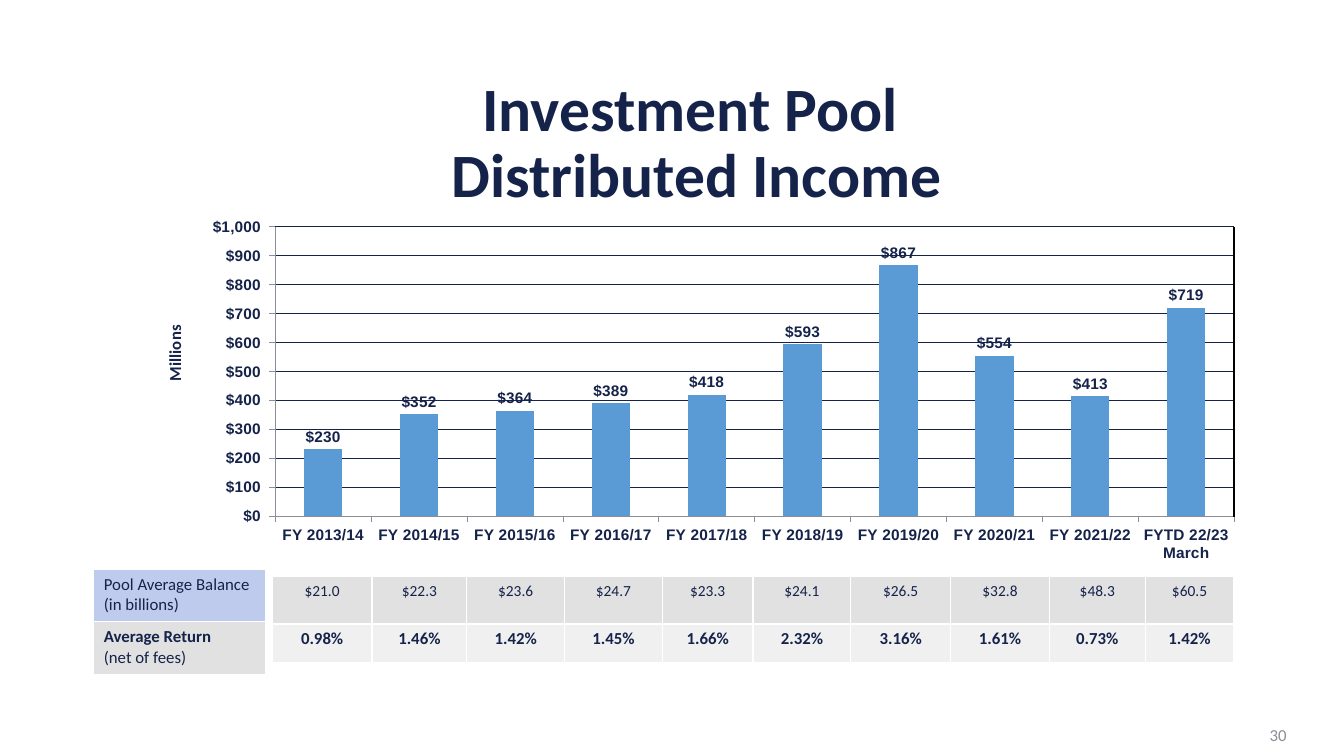
from lxml import etree
from pptx import Presentation
from pptx.chart.data import CategoryChartData
from pptx.dml.color import RGBColor
from pptx.enum import chart as ch, shapes, text
from pptx.oxml import parse_xml
from pptx.oxml.ns import nsdecls, qn
from pptx.util import Inches, Pt

NAVY, GREY, WHITE = "15234A", "8C8D96", "FFFFFF"
BLUE, LILAC, SILVER, PALE = "5B9BD5", "BECBED", "E1E1E1", "F0F0F0"
CENTER, LEFT, RIGHT = text.PP_ALIGN.CENTER, text.PP_ALIGN.LEFT, text.PP_ALIGN.RIGHT

YEARS = [f"FY {year}/{year - 1999}" for year in range(2013, 2022)] + ["FYTD 22/23 March"]
INCOME = [230, 352, 364, 389, 418, 593, 867, 554, 413, 719]
BALANCES = ["$21.0", "$22.3", "$23.6", "$24.7", "$23.3",
            "$24.1", "$26.5", "$32.8", "$48.3", "$60.5"]
RETURNS = ["0.98%", "1.46%", "1.42%", "1.45%", "1.66%",
           "2.32%", "3.16%", "1.61%", "0.73%", "1.42%"]
YEAR_WIDTHS = [0.99, 0.94, 0.97, 0.97, 0.9, 0.97, 0.99, 0.98, 0.95, 0.88]


def rgb(color):
    return RGBColor.from_string(color)


def style_font(font, size, color=NAVY, bold=False, name="Calibri"):
    font.size, font.bold, font.name = Pt(size), bold, name
    font.color.rgb = rgb(color)


def style_line(line, color, width):
    line.color.rgb = rgb(color)
    line.width = Pt(width)


def add_label(slide, box, wording, size, color, align, bold=False):
    label = slide.shapes.add_textbox(*map(Inches, box))
    frame = label.text_frame
    frame.word_wrap = True
    frame.vertical_anchor = text.MSO_ANCHOR.MIDDLE
    frame.text = wording
    paragraph = frame.paragraphs[0]
    paragraph.alignment = align
    for run in paragraph.runs:
        style_font(run.font, size, color, bold)
    return paragraph


def place(parent, index, **fractions):
    """Give a chart part a manual layout, in fractions of the chart."""
    for old in parent.findall(qn("c:layout")):
        parent.remove(old)
    layout = parse_xml(f"<c:layout {nsdecls('c')}><c:manualLayout/></c:layout>")
    settings = {"xMode": "edge", "yMode": "edge", **fractions}
    if "w" in fractions:
        settings = {"layoutTarget": "inner", **settings}
    for tag, value in settings.items():
        etree.SubElement(layout[0], qn(f"c:{tag}")).set("val", str(value))
    parent.insert(index, layout)


def add_income_chart(slide, box):
    data = CategoryChartData()
    data.categories = YEARS
    data.add_series("Series 1", INCOME)
    chart = slide.shapes.add_chart(
        ch.XL_CHART_TYPE.COLUMN_CLUSTERED, *map(Inches, box), data).chart
    chart.has_legend = chart.has_title = False
    style_font(chart.font, 18)

    # Columns and their values
    columns = chart.plots[0]
    columns.gap_width = 150
    columns.vary_by_categories = False
    columns.series[0].format.fill.solid()
    columns.series[0].format.fill.fore_color.rgb = rgb(BLUE)
    columns.has_data_labels = True
    labels = columns.data_labels
    labels.show_value = True
    labels.position = ch.XL_LABEL_POSITION.OUTSIDE_END
    labels.number_format, labels.number_format_is_linked = '"$"#,##0', False
    style_font(labels.font, 11, bold=True, name="Arial")

    # Axes
    millions = chart.value_axis
    for axis in (chart.category_axis, millions):
        axis.major_tick_mark = ch.XL_TICK_MARK.OUTSIDE
        axis.minor_tick_mark = ch.XL_TICK_MARK.NONE
        style_font(axis.tick_labels.font, 11, bold=True, name="Arial")
        style_line(axis.format.line, GREY, 0.5)
    millions.minimum_scale, millions.maximum_scale, millions.major_unit = 0, 1000, 100
    millions.tick_labels.number_format = '"$"#,##0_);[Red]\\("$"#,##0\\)'
    millions.tick_labels.number_format_is_linked = False
    millions.has_major_gridlines = True
    style_line(millions.major_gridlines.format.line, NAVY, 0.5)
    heading = millions.axis_title
    heading.text_frame.text = "Millions"
    style_font(heading.text_frame.paragraphs[0].runs[0].font, 12, bold=True)

    # Layout
    place(heading.text_frame._txBody.getparent().getparent(), 1, x=0.01, y=0.37)
    place(chart._chartSpace.chart.plotArea, 0, x=0.115, y=0.115, w=0.875, h=0.77)


def add_border_line(slide, x, top, bottom):
    border = slide.shapes.add_connector(
        shapes.MSO_CONNECTOR.STRAIGHT, Inches(x), Inches(top), Inches(x), Inches(bottom))
    style_line(border.line, "000000", 1.5)
    etree.SubElement(border._element.spPr, qn("a:effectLst"))


def fill_cell(cell, wording, fill, align, size, bold_lines):
    properties = cell._tc.get_or_add_tcPr()
    for side in "LRTB":
        properties.append(parse_xml(
            f'<a:ln{side} {nsdecls("a")} w="12700"><a:solidFill>'
            f'<a:srgbClr val="{WHITE}"/></a:solidFill></a:ln{side}>'))
    cell.fill.solid()
    cell.fill.fore_color.rgb = rgb(fill)
    cell.text = wording
    for paragraph, bold in zip(cell.text_frame.paragraphs, bold_lines):
        paragraph.alignment = align
        style_font(paragraph.runs[0].font, size, bold=bold)


def add_figures(slide, left, top, widths, heights, rows, align):
    """Each row is (wordings, fill, size, bold flag per line)."""
    table = slide.shapes.add_table(
        len(rows), len(widths), Inches(left), Inches(top),
        Inches(sum(widths)), Inches(sum(heights))).table
    table.first_row = table.horz_banding = False
    for column, width in zip(table.columns, widths):
        column.width = Inches(width)
    for row, height, (wordings, fill, size, bold_lines) in zip(table.rows, heights, rows):
        row.height = Inches(height)
        for cell, wording in zip(row.cells, wordings):
            fill_cell(cell, wording, fill, align, size, bold_lines)


def main():
    deck = Presentation()
    deck.slide_width, deck.slide_height = Inches(13.33), Inches(7.5)
    slide = deck.slides.add_slide(deck.slide_layouts[6])

    # Title
    title = add_label(slide, (2.5, 0.81, 8.83, 1.25),
                      "Investment Pool \vDistributed Income", 44, NAVY, CENTER, True)
    title.line_spacing = 0.9

    # Chart with its right border
    add_income_chart(slide, (1.48, 1.82, 10.87, 3.75))
    add_border_line(slide, 12.24, 2.25, 5.13)

    # Row headings, then the yearly figures
    add_figures(slide, 0.93, 5.65, [1.7], [0.52, 0.52], [
        (["Pool Average Balance\n(in billions)"], LILAC, 12, (False, False)),
        (["Average Return\n(net of fees)"], SILVER, 12, (True, False)),
    ], LEFT)
    add_figures(slide, 2.7, 5.72, YEAR_WIDTHS, [0.47, 0.38], [
        (BALANCES, SILVER, 11, (False,)),
        (RETURNS, PALE, 12, (True,)),
    ], CENTER)

    # Page number
    add_label(slide, (9.86, 7.09, 3, 0.4), "30", 12, GREY, RIGHT)

    deck.save("out.pptx")


if __name__ == "__main__":
    main()
